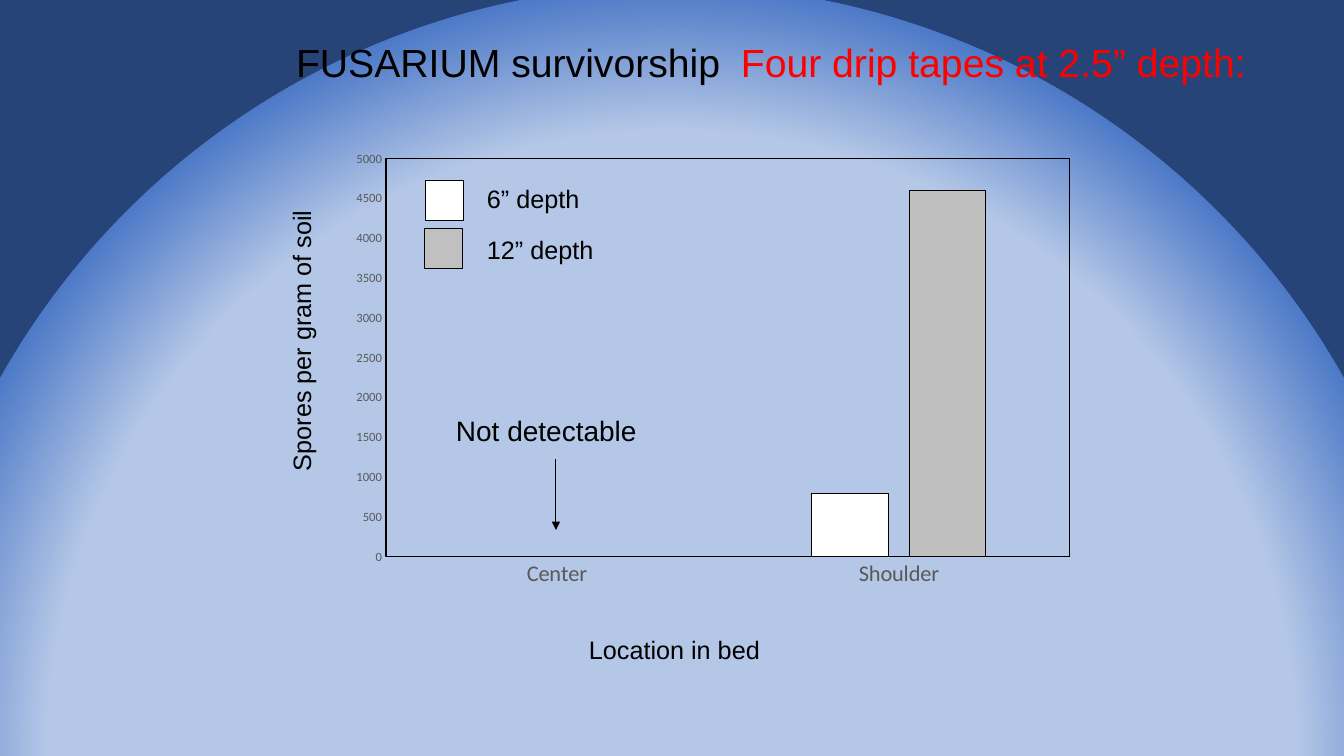
"""Build the Fusarium survivorship slide with its column chart."""
import pptx
import pptx.chart.data
import pptx.dml.color
import pptx.enum.chart
import pptx.enum.shapes
import pptx.enum.text
import pptx.oxml
import pptx.oxml.ns
import pptx.util

COLORS = {"black": "000000", "red": "FF0000", "white": "FFFFFF", "silver": "C0C0C0",
          "gray": "BFBFBF", "axis": "595959", "pale": "B4C7E7", "blue": "4D79C7",
          "navy": "264478"}
SLIDE_SIZE = (1344, 756)
TITLE = ("FUSARIUM survivorship", (286, 33, 814, 57), 28, "black")
LABELS = [
    ("Four drip tapes at 2.5” depth:", (731, 33, 532, 57), 28, "red", 0),
    ("Spores per gram of soil", (159, 319, 284, 40), 18, "black", 270),
    ("Location in bed", (579, 629, 193, 40), 18, "black", 0),
    ("6” depth", (477, 178, 113, 40), 18, "black", 0),
    ("12” depth", (477, 229, 127, 40), 18, "black", 0),
    ("Not detectable", (446, 409, 203, 44), 20, "black", 0),
]
SWATCHES = [((426, 181, 38, 40), "white"), ((425, 229, 38, 40), "silver")]
ARROW = (556, 459, 556, 530)
CHART_BOX = (324, 127, 781, 469)
PLOT_BOX = (386, 159, 684, 398)
CATEGORIES = ["Center", "Shoulder"]
SERIES = [("Series 1", (0, 800), "white"), ("Series 2", (0, 4600), "gray")]
BACKGROUND_STOPS = [(81, "pale"), (100, "blue"), (100, "navy")]
EMU_PER_PX = 12192000 / 1344


def px(*lengths):
    return [pptx.util.Emu(round(length * EMU_PER_PX)) for length in lengths]


def color(name):
    return pptx.dml.color.RGBColor.from_string(COLORS[name])


def xml(text):
    return pptx.oxml.parse_xml(text.replace(
        ">", " " + pptx.oxml.ns.nsdecls("a", "c") + ">", 1))


def outline(line):
    line.color.rgb = color("black")
    line.width = pptx.util.Pt(0.75)


def paint(fill, name):
    fill.solid()
    fill.fore_color.rgb = color(name)


def set_font(font, size, name, family):
    font.size = pptx.util.Pt(size)
    font.name = family
    font.color.rgb = color(name)


def write(shape, text, size, name, wrap):
    frame = shape.text_frame
    frame.word_wrap = wrap
    frame.auto_size = pptx.enum.text.MSO_AUTO_SIZE.SHAPE_TO_FIT_TEXT
    frame.vertical_anchor = pptx.enum.text.MSO_ANCHOR.TOP
    paragraph = frame.paragraphs[0]
    paragraph.alignment = pptx.enum.text.PP_ALIGN.LEFT
    run = paragraph.add_run()
    run.text = text
    set_font(run.font, size, name, "Arial")


def set_background(slide):
    fill = slide.background.fill
    fill.gradient()
    gradient = slide.background._cSld.find(".//" + pptx.oxml.ns.qn("a:gradFill"))
    for child in list(gradient):
        gradient.remove(child)
    stops = "".join(f'<a:gs pos="{position * 1000}"><a:srgbClr val="{COLORS[name]}"/></a:gs>'
                    for position, name in BACKGROUND_STOPS)
    gradient.append(xml(f"<a:gsLst>{stops}</a:gsLst>"))
    gradient.append(xml('<a:path path="circle"><a:fillToRect l="50000" t="130000" '
                        'r="50000" b="-30000"/></a:path>'))


def place_plot(area):
    for layout in area.findall(pptx.oxml.ns.qn("c:layout")):
        area.remove(layout)
    left, top, width, height = CHART_BOX
    plot_left, plot_top, plot_width, plot_height = PLOT_BOX
    fractions = {"x": (plot_left - left) / width, "y": (plot_top - top) / height,
                 "w": plot_width / width, "h": plot_height / height}
    places = "".join(f'<c:{key} val="{value:.4f}"/>' for key, value in fractions.items())
    area.insert(0, xml('<c:layout><c:manualLayout><c:layoutTarget val="inner"/>'
                       '<c:xMode val="edge"/><c:yMode val="edge"/>'
                       f"{places}</c:manualLayout></c:layout>"))
    area.append(xml('<c:spPr><a:noFill/><a:ln w="9525"><a:solidFill>'
                    f'<a:srgbClr val="{COLORS["black"]}"/></a:solidFill></a:ln></c:spPr>'))


def add_chart(slide):
    data = pptx.chart.data.CategoryChartData()
    data.categories = CATEGORIES
    for name, values, _ in SERIES:
        data.add_series(name, values)
    chart = slide.shapes.add_chart(
        pptx.enum.chart.XL_CHART_TYPE.COLUMN_CLUSTERED, *px(*CHART_BOX), data).chart
    chart.has_legend = False
    chart.has_title = False
    set_font(chart.font, 10, "black", "Calibri")
    plot = chart.plots[0]
    plot.gap_width, plot.overlap, plot.vary_by_categories = 219, -27, False
    for series, (_, _, name) in zip(plot.series, SERIES):
        paint(series.format.fill, name)
        outline(series.format.line)
    for axis, size in ((chart.category_axis, 16), (chart.value_axis, 9)):
        axis.major_tick_mark = axis.minor_tick_mark = pptx.enum.chart.XL_TICK_MARK.NONE
        axis.has_major_gridlines = False
        set_font(axis.tick_labels.font, size, "axis", "Calibri")
    outline(chart.category_axis.format.line)
    values = chart.value_axis
    values.format.line.fill.background()
    values.minimum_scale, values.maximum_scale, values.major_unit = 0, 5000, 500
    place_plot(chart._chartSpace.chart.plotArea)


def add_arrow(slide):
    arrow = slide.shapes.add_connector(
        pptx.enum.shapes.MSO_CONNECTOR.STRAIGHT, *px(*ARROW))
    outline(arrow.line)
    arrow.line._get_or_add_ln().append(xml('<a:tailEnd type="triangle"></a:tailEnd>'))
    arrow._element.spPr.append(xml("<a:effectLst></a:effectLst>"))


def main():
    presentation = pptx.Presentation()
    presentation.slide_width, presentation.slide_height = px(*SLIDE_SIZE)
    slide = presentation.slides.add_slide(presentation.slide_layouts[5])
    set_background(slide)
    add_chart(slide)
    text, box, size, name = TITLE
    title = slide.shapes.title
    title.left, title.top, title.width, title.height = px(*box)
    write(title, text, size, name, True)
    for box, name in SWATCHES:
        swatch = slide.shapes.add_shape(pptx.enum.shapes.MSO_SHAPE.RECTANGLE, *px(*box))
        swatch.shadow.inherit = False
        paint(swatch.fill, name)
        outline(swatch.line)
    for text, box, size, name, rotation in LABELS:
        label = slide.shapes.add_textbox(*px(*box))
        label.rotation = rotation
        write(label, text, size, name, False)
    add_arrow(slide)
    presentation.save("out.pptx")


if __name__ == "__main__":
    main()
